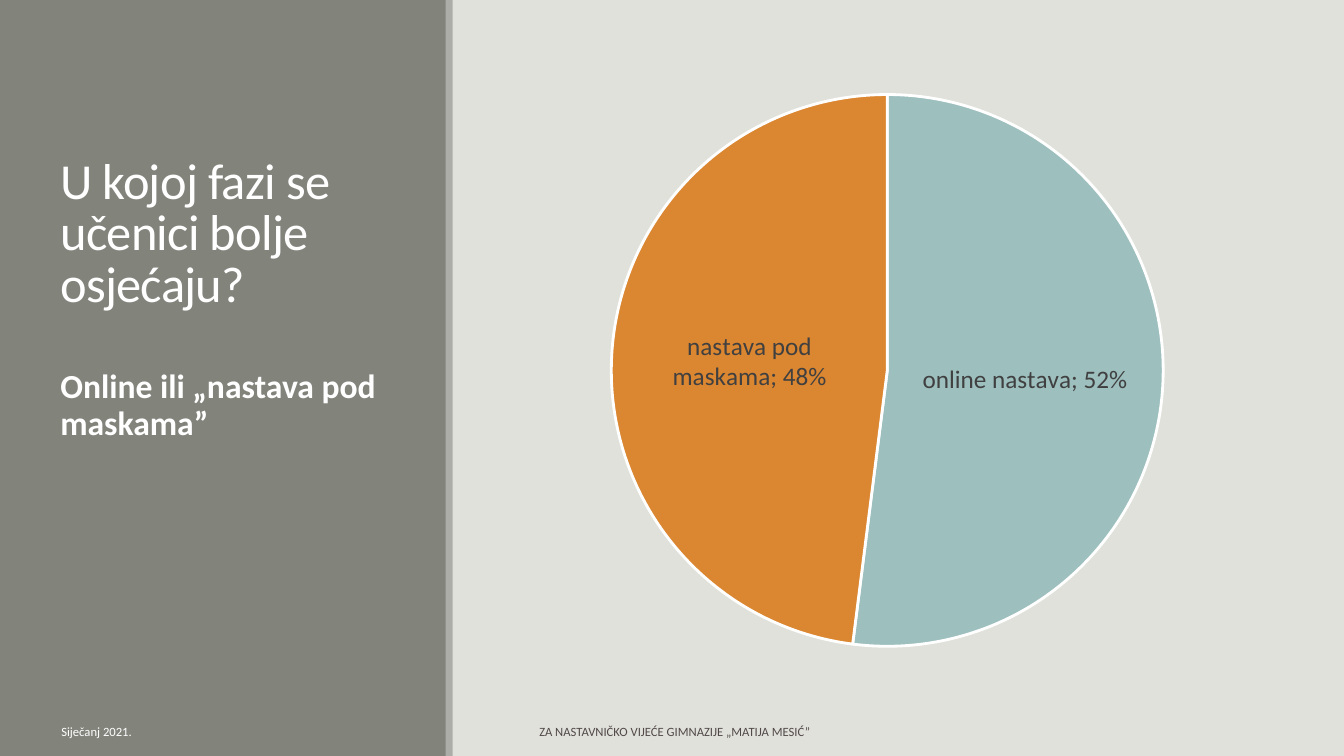
from dataclasses import dataclass

from lxml import etree
from pptx import Presentation
from pptx.chart.data import CategoryChartData
from pptx.dml.color import RGBColor
from pptx.enum.chart import XL_CHART_TYPE as Chart, XL_LABEL_POSITION as Place
from pptx.enum.text import MSO_ANCHOR as Anchor
from pptx.util import Inches, Pt

FONT = "Calibri"
WHITE = "FFFFFF"


@dataclass
class Band:
    left: float
    width: float
    color: str


@dataclass
class Label:
    text: str
    box: tuple[float, float, float, float]
    size: int
    color: str = WHITE
    anchor: Anchor = Anchor.MIDDLE
    bold: bool = False
    leading: float = 1.0
    kern: int = 0  # hundredths of a point


@dataclass
class Slice:
    name: str
    share: float
    color: str


BANDS = [Band(0, 4.43, "82847C"), Band(4.42, 0.07, "ACADA8")]

LABELS = [
    Label("U kojoj fazi se učenici bolje osjećaju?", (0.5, 0.65, 3.5, 2.5), 36,
          anchor=Anchor.BOTTOM, leading=0.85, kern=-50),
    Label("Online ili „nastava pod maskama”", (0.5, 3.62, 3.5, 3.28), 24,
          anchor=Anchor.TOP, bold=True, leading=0.9),
    Label("Siječanj 2021.", (0.51, 7.06, 2.86, 0.4), 9),
    Label("ZA NASTAVNIČKO VIJEĆE GIMNAZIJE „MATIJA MESIĆ”",
          (5.25, 7.06, 5.08, 0.4), 9, "514949"),
]

SLICES = [
    Slice("online nastava", 0.52, "9DBFBE"),
    Slice("nastava pod maskama", 0.48, "DB8631"),
]


def rgb(color: str) -> RGBColor:
    return RGBColor.from_string(color)


def paint(fill, color: str) -> None:
    fill.solid()
    fill.fore_color.rgb = rgb(color)


def style(font, size: int, color: str) -> None:
    font.name = FONT
    font.size = Pt(size)
    font.color.rgb = rgb(color)


def add_band(slide, band: Band) -> None:
    shape = slide.shapes.add_shape(1, Inches(band.left), 0, Inches(band.width), Inches(7.5))
    shape.shadow.inherit = False
    paint(shape.fill, band.color)
    shape.line.fill.background()


def add_label(slide, label: Label) -> None:
    frame = slide.shapes.add_textbox(*map(Inches, label.box)).text_frame
    frame.word_wrap = True
    frame.vertical_anchor = label.anchor
    para = frame.paragraphs[0]
    run = para.add_run()
    run.text = label.text
    para.line_spacing = label.leading
    style(para.font, label.size, label.color)
    para.font.bold = label.bold
    if label.kern:
        run.font._element.set("spc", str(label.kern))


def add_pie(slide, slices: list[Slice]) -> None:
    data = CategoryChartData(number_format="0%")
    data.categories = [part.name for part in slices]
    data.add_series("Series 1", [part.share for part in slices])
    box = map(Inches, (5.25, 0.8, 7.1, 5.75))
    chart = slide.shapes.add_chart(Chart.PIE, *box, data).chart
    chart.has_title = False
    chart.has_legend = False
    style(chart.font, 10, "000000")

    plot = chart.plots[0]
    plot.vary_by_categories = True
    for index, part in enumerate(slices):
        look = plot.series[0].points[index].format
        paint(look.fill, part.color)
        look.line.color.rgb = rgb(WHITE)
        look.line.width = Pt(2)

    plot.has_data_labels = True
    tags = plot.data_labels
    tags.show_value = True
    tags.show_category_name = True
    tags.number_format = "0%"
    tags.number_format_is_linked = False
    tags.position = Place.CENTER
    style(tags.font, 18, "404040")
    mark = etree.Element(tags._element.tag.replace("dLbls", "separator"))
    mark.text = "; "
    tags._element.xpath("c:showBubbleSize")[0].addnext(mark)


def main() -> None:
    deck = Presentation()
    deck.slide_width = Inches(13.33)
    deck.slide_height = Inches(7.5)
    slide = deck.slides.add_slide(deck.slide_layouts[6])
    paint(slide.background.fill, "E1E1DB")
    for band in BANDS:
        add_band(slide, band)
    add_pie(slide, SLICES)
    for label in LABELS:
        add_label(slide, label)
    deck.save("out.pptx")


if __name__ == "__main__":
    main()
